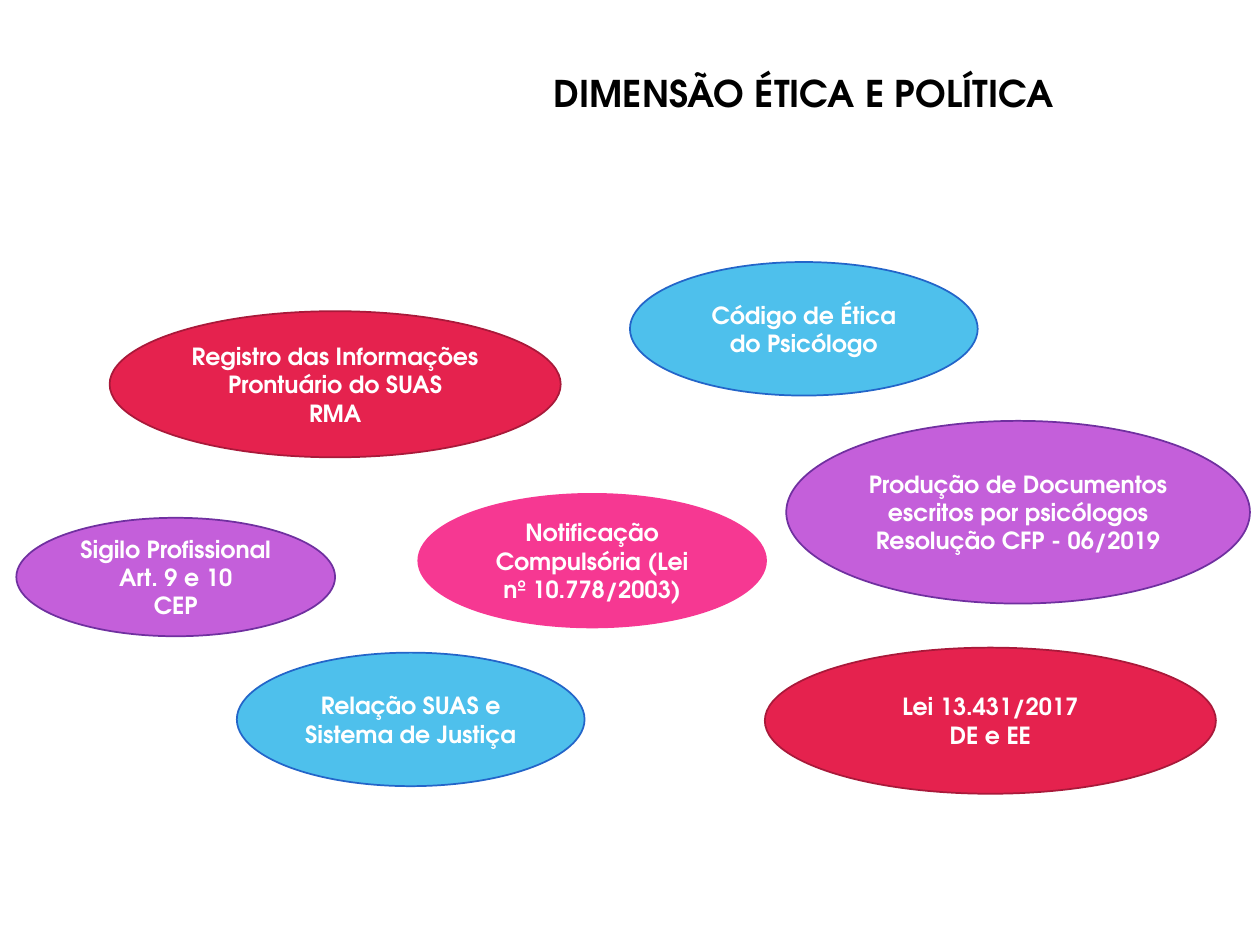
from pptx import Presentation
from pptx.dml.color import RGBColor
from pptx.enum.shapes import MSO_SHAPE
from pptx.enum.text import MSO_ANCHOR, PP_ALIGN
from pptx.util import Inches, Pt

FONT = "TeX Gyre Adventor"
COLORS = {"title": "000000", "text": "FFFFFF"}
# Style: fill, line, width, height
STYLES = {
    "red": ("E5224E", "A9193A", 3.58, 1.16),
    "purple": ("C45FDA", "7030A0", 3.68, 1.45),
    "small purple": ("C45FDA", "7030A0", 2.53, 0.94),
    "pink": ("F63892", "F63892", 2.76, 1.06),
    "blue": ("4EC0EC", "2365C9", 2.76, 1.06),
}
# Topic: style, left, top, text (\v is a line break)
TOPICS = [
    ("red", 0.87, 2.47, "Registro das Informações Prontuário do SUAS\vRMA"),
    ("purple", 6.24, 3.34,
     "Produção de Documentos escritos por psicólogos Resolução CFP - 06/2019"),
    ("red", 6.07, 5.14, "Lei 13.431/2017\vDE e EE"),
    ("small purple", 0.13, 4.11, "Sigilo Profissional\vArt. 9 e 10\vCEP"),
    ("pink", 3.32, 3.92, "Notificação Compulsória (Lei nº 10.778/2003)"),
    ("blue", 1.88, 5.18, "Relação SUAS e Sistema de Justiça"),
    ("blue", 5, 2.08, "Código de Ética do Psicólogo"),
]


def rgb(value):
    return RGBColor.from_string(value)


def write(tf, text, size, color):
    """Fill a text frame with one centred bold paragraph."""
    tf.word_wrap = True
    tf.vertical_anchor = MSO_ANCHOR.MIDDLE
    p = tf.paragraphs[0]
    p.text = text
    p.alignment = PP_ALIGN.CENTER
    p.font.name = FONT
    p.font.size = Pt(size)
    p.font.bold = True
    p.font.color.rgb = rgb(color)
    return p


def add_title(s, left, top, width, height):
    title = s.shapes.title
    title.left, title.top = Inches(left), Inches(top)
    title.width, title.height = Inches(width), Inches(height)
    p = write(title.text_frame, "DIMENSÃO ÉTICA E POLÍTICA", 21, COLORS["title"])
    p.line_spacing = 0.9


def add_topic(s, style, left, top, text):
    fill, line, width, height = STYLES[style]
    sp = s.shapes.add_shape(MSO_SHAPE.OVAL, Inches(left), Inches(top),
                            Inches(width), Inches(height))
    sp.shadow.inherit = False
    sp.fill.solid()
    sp.fill.fore_color.rgb = rgb(fill)
    sp.line.color.rgb = rgb(line)
    sp.line.width = Pt(1)
    write(sp.text_frame, text, 13.5, COLORS["text"])


def main():
    prs = Presentation()
    prs.slide_width, prs.slide_height = Inches(10), Inches(7.5)
    s = prs.slides.add_slide(prs.slide_layouts[5])
    add_title(s, 3.6, 0.23, 5.56, 1.06)
    for topic in TOPICS:
        add_topic(s, *topic)
    prs.save("out.pptx")


if __name__ == "__main__":
    main()
